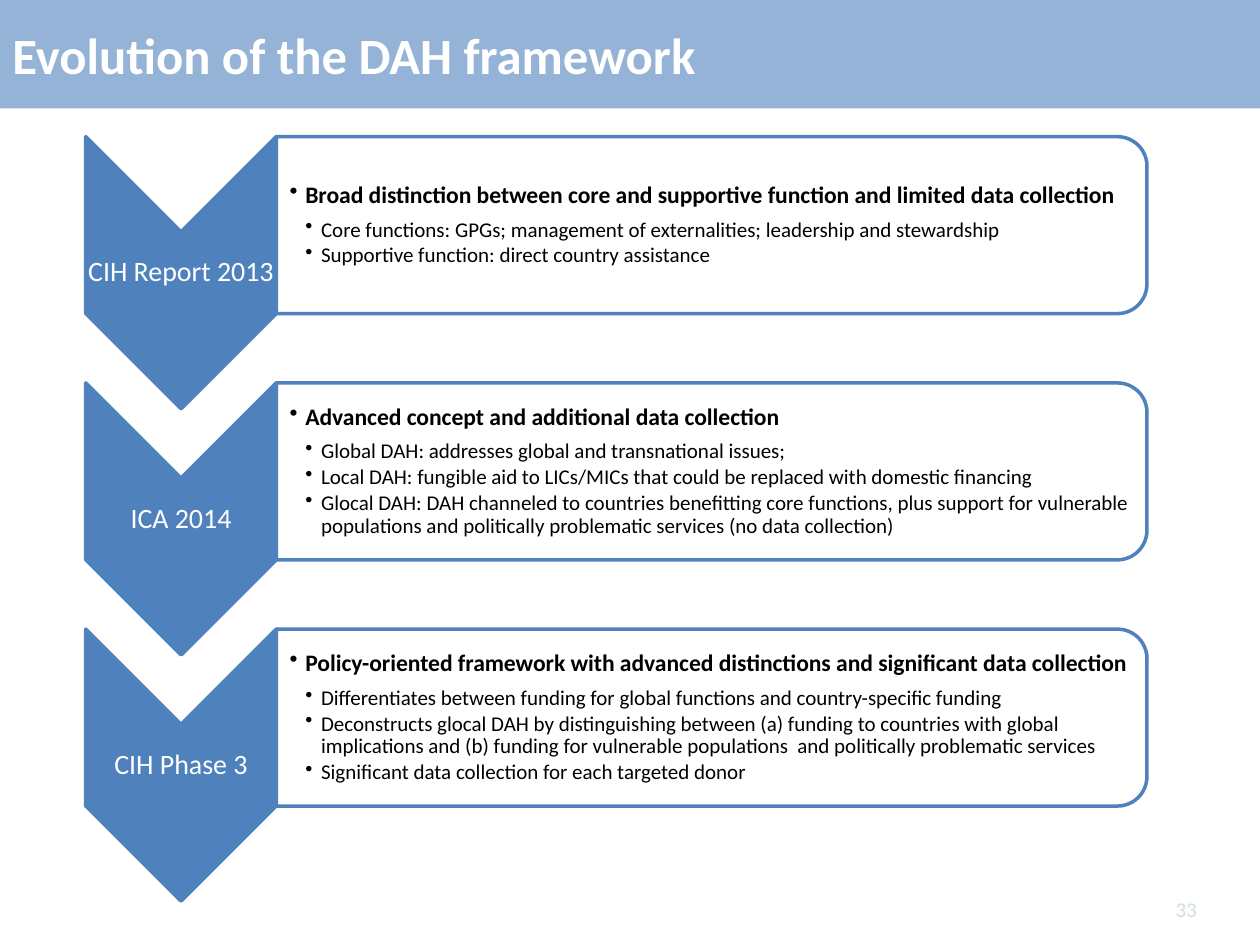
from lxml import etree
from pptx import Presentation
from pptx.dml.color import RGBColor
from pptx.enum.shapes import MSO_SHAPE
from pptx.enum.text import MSO_ANCHOR, PP_ALIGN
from pptx.oxml.ns import qn
from pptx.util import Pt

RECTANGLE = MSO_SHAPE.RECTANGLE
CHEVRON = MSO_SHAPE.CHEVRON
ROUNDED_TOP = MSO_SHAPE.ROUND_2_SAME_RECTANGLE
MIDDLE = MSO_ANCHOR.MIDDLE
LEFT, CENTER, RIGHT = PP_ALIGN.LEFT, PP_ALIGN.CENTER, PP_ALIGN.RIGHT

WHITE = RGBColor(0xFF, 0xFF, 0xFF)
BLACK = RGBColor(0, 0, 0)
BANNER_BLUE = RGBColor(0x95, 0xB3, 0xD7)
STAGE_BLUE = RGBColor(0x4F, 0x81, 0xBD)
PALE_BLUE = RGBColor(0xCE, 0xDE, 0xE4)
FONT = "Calibri"

SLIDE_WIDTH, SLIDE_HEIGHT = 720, 540
STAGES_LEFT, STAGES_TOP, STAGE_PITCH = 49, 78.1, 140.7
CHEVRON_WIDTH, CHEVRON_HEIGHT = 108.9, 155.5
PANEL_WIDTH, PANEL_HEIGHT = 497.5, 101.1

STAGES = [
    ("CIH Report 2013",
     "Broad distinction between core and supportive function and limited data collection",
     ["Core functions: GPGs; management of externalities; leadership and stewardship",
      "Supportive function: direct country assistance"]),
    ("ICA 2014",
     "Advanced concept and additional data collection",
     ["Global DAH: addresses global and transnational issues;",
      "Local DAH: fungible aid to LICs/MICs that could be replaced with domestic financing",
      "Glocal DAH: DAH channeled to countries benefitting core functions, plus support for "
      "vulnerable populations and politically problematic services (no data collection)"]),
    ("CIH Phase 3",
     "Policy-oriented framework with advanced distinctions and significant data collection",
     ["Differentiates between funding for global functions and country-specific funding",
      "Deconstructs glocal DAH by distinguishing between (a) funding to countries with global "
      "implications and (b) funding for vulnerable populations  and politically problematic "
      "services",
      "Significant data collection for each targeted donor"]),
]


def style_text(paragraph, size, color, bold=False, alignment=LEFT):
    paragraph.alignment = alignment
    for run in paragraph.runs:
        font = run.font
        font.name, font.size, font.bold = FONT, Pt(size), bold
        font.color.rgb = color


def add_text_box(shapes, left, top, width, height, left_inset=1):
    frame = shapes.add_textbox(Pt(left), Pt(top), Pt(width), Pt(height)).text_frame
    frame.word_wrap = True
    frame.vertical_anchor = MIDDLE
    frame.margin_left = Pt(left_inset)
    frame.margin_top = frame.margin_right = frame.margin_bottom = Pt(1)
    return frame


def add_turned_shape(shapes, kind, left, top, width, height, fill):
    """Place a shape turned by 90 degrees so that it fills the given box."""
    shape = shapes.add_shape(kind, Pt(left + (width - height) / 2),
                             Pt(top + (height - width) / 2), Pt(height), Pt(width))
    shape.rotation = 90
    shape.shadow.inherit = False
    shape.fill.solid()
    shape.fill.fore_color.rgb = fill
    shape.line.color.rgb = STAGE_BLUE
    shape.line.width = Pt(2)
    return shape


def add_bullet(paragraph, indent, space_after):
    properties = paragraph._p.get_or_add_pPr()
    properties.set("marL", str(Pt(indent)))
    properties.set("indent", str(-Pt(9)))
    etree.SubElement(properties, qn("a:buChar"), char="•")
    paragraph.line_spacing = 0.9
    paragraph.space_after = Pt(space_after)


def add_banner(slide, left, top, width, height):
    banner = slide.shapes.add_shape(RECTANGLE, Pt(left), Pt(top), Pt(width), Pt(height))
    banner.shadow.inherit = False
    banner.fill.solid()
    banner.fill.fore_color.rgb = BANNER_BLUE
    banner.line.fill.background()
    frame = banner.text_frame
    frame.word_wrap = False
    frame.vertical_anchor = MIDDLE
    frame.text = "Evolution of the DAH framework"
    style_text(frame.paragraphs[0], 29, WHITE, bold=True)


def add_page_number(slide, left, top, width, height):
    frame = add_text_box(slide.shapes, left, top, width, height)
    frame.margin_right = Pt(7.2)
    frame.text = "33"
    style_text(frame.paragraphs[0], 12, PALE_BLUE, alignment=RIGHT)


def add_chevron(shapes, left, top, width, height, label):
    add_turned_shape(shapes, CHEVRON, left, top, width, height, STAGE_BLUE)
    # The label sits between the notch and the start of the point
    notch = width / 2
    frame = add_text_box(shapes, left, top + notch, width, height - 2 * notch)
    frame.text = label
    style_text(frame.paragraphs[0], 16, WHITE, alignment=CENTER)
    frame.paragraphs[0].line_spacing = 0.9


def add_panel(shapes, left, top, width, height, heading, points):
    panel = add_turned_shape(shapes, ROUNDED_TOP, left, top, width, height, WHITE)
    color = panel.fill._xPr.find(qn("a:solidFill")).find(qn("a:srgbClr"))
    etree.SubElement(color, qn("a:alpha"), val="90000")

    # Text keeps clear of the rounded corners
    inset = 5
    frame = add_text_box(shapes, left, top + inset, width - inset, height - 2 * inset, 7.6)
    frame.text = "\n".join([heading, *points])
    title, *details = frame.paragraphs
    add_bullet(title, 9, 6)
    style_text(title, 13.5, BLACK, bold=True)
    for paragraph in details:
        paragraph.level = 1
        add_bullet(paragraph, 18, 1.8)
        style_text(paragraph, 12, BLACK)


def add_stages(slide, left, top):
    shapes = slide.shapes.add_group_shape().shapes
    for index, (label, heading, points) in enumerate(STAGES):
        stage_top = top + index * STAGE_PITCH
        add_chevron(shapes, left, stage_top, CHEVRON_WIDTH, CHEVRON_HEIGHT, label)
        add_panel(shapes, left + CHEVRON_WIDTH, stage_top, PANEL_WIDTH, PANEL_HEIGHT,
                  heading, points)


def main():
    presentation = Presentation()
    presentation.slide_width = Pt(SLIDE_WIDTH)
    presentation.slide_height = Pt(SLIDE_HEIGHT)
    slide = presentation.slides.add_slide(presentation.slide_layouts[6])
    add_banner(slide, 0, 0, SLIDE_WIDTH, 62)
    add_page_number(slide, 661, 505, 30, 29)
    add_stages(slide, STAGES_LEFT, STAGES_TOP)
    presentation.save("out.pptx")


if __name__ == "__main__":
    main()
